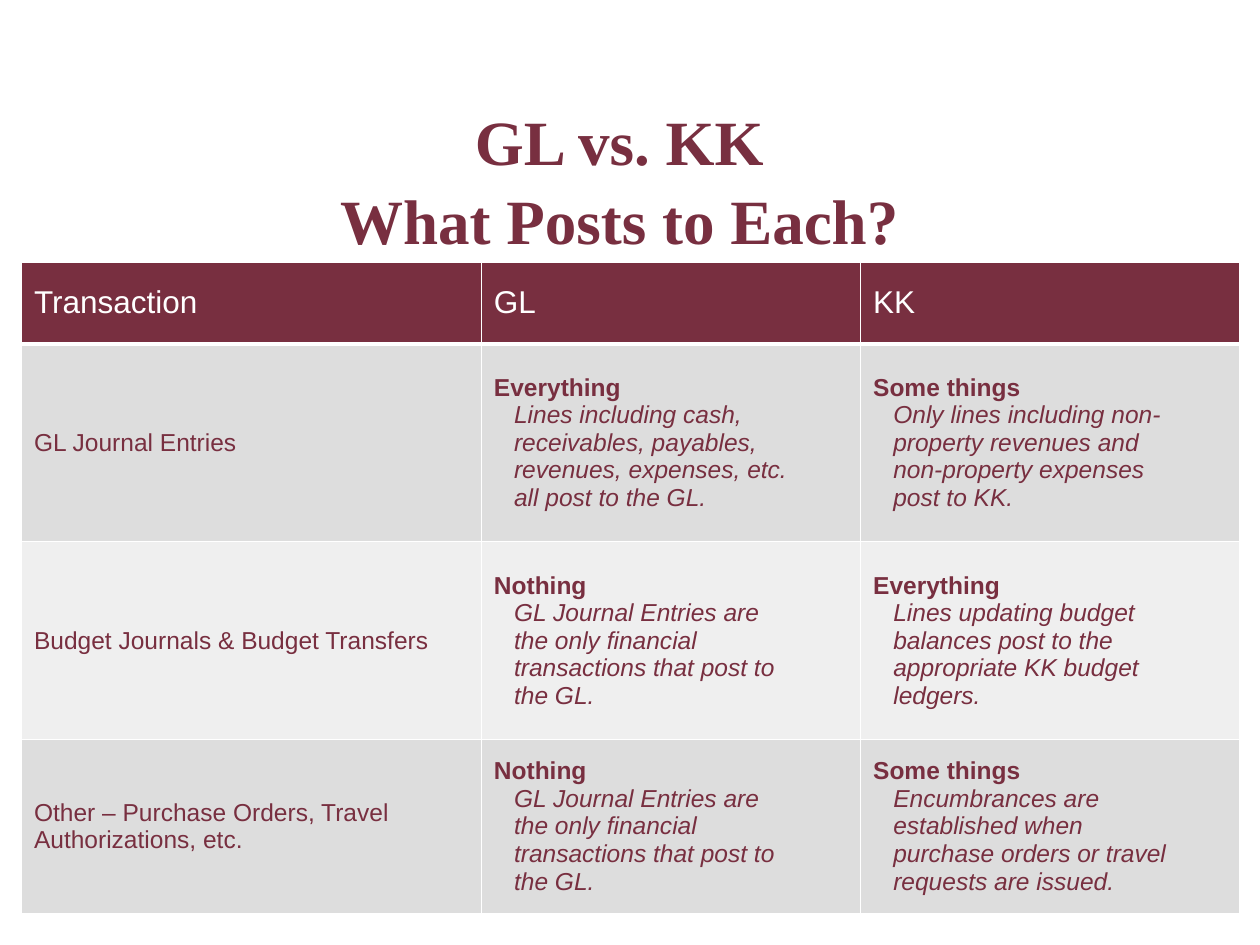
from dataclasses import dataclass

from lxml.etree import SubElement
from pptx import Presentation
from pptx.dml.color import RGBColor as RGB
from pptx.enum.text import MSO_ANCHOR as Anchor, PP_ALIGN as Align
from pptx.oxml.ns import qn
from pptx.util import Inches, Pt


@dataclass(frozen=True)
class Theme:
    garnet: str = "782F40"
    white: str = "FFFFFF"
    bands: tuple = ("DDDDDD", "EFEFEF")
    title_font: str = "Times New Roman"
    body_font: str = "Arial"
    title_size: int = 36
    header_size: int = 18
    body_size: int = 14
    rule: int = 1
    header_rule: int = 3


THEME = Theme()
COLUMN_WIDTHS = (3.65, 3.01, 3.01)
ROW_HEIGHTS = (0.65, 1.57, 1.57, 1.38)
DETAIL_INDENT = 0.16

HEADINGS = ("Transaction", "GL", "KK")
NOTHING_IN_GL = ("Nothing\nGL Journal Entries are\nthe only financial\n"
                 "transactions that post to\nthe GL.")
TRANSACTIONS = (
    ("GL Journal Entries",
     "Everything\nLines including cash,\nreceivables, payables,\n"
     "revenues, expenses, etc.\nall post to the GL.",
     "Some things\nOnly lines including non-\nproperty revenues and\n"
     "non-property expenses\npost to KK."),
    ("Budget Journals & Budget Transfers",
     NOTHING_IN_GL,
     "Everything\nLines updating budget\nbalances post to the\n"
     "appropriate KK budget\nledgers."),
    ("Other – Purchase Orders, Travel Authorizations, etc.",
     NOTHING_IN_GL,
     "Some things\nEncumbrances are\nestablished when\n"
     "purchase orders or travel\nrequests are issued."),
)


def style_runs(paragraph, font, size, color, bold=False, italic=False):
    for run in paragraph.runs:
        run.font.name = font
        run.font.size = Pt(size)
        run.font.color.rgb = RGB.from_string(color)
        run.font.bold = bold
        run.font.italic = italic


def add_title(slide, text):
    title = slide.shapes.add_textbox(Inches(1.27), Inches(0.92),
                                     Inches(7.29), Inches(1.17))
    frame = title.text_frame
    frame.word_wrap = True
    frame.vertical_anchor = Anchor.BOTTOM
    frame.margin_left = frame.margin_right = Inches(0.3)
    frame.text = text
    heading = frame.paragraphs[0]
    heading.alignment = Align.CENTER
    heading.line_spacing = 1.05
    style_runs(heading, THEME.title_font, THEME.title_size, THEME.garnet, bold=True)


def set_borders(cell, bottom):
    properties = cell._tc.get_or_add_tcPr()
    widths = {"L": THEME.rule, "R": THEME.rule, "T": THEME.rule, "B": bottom}
    for side, width in widths.items():
        line = SubElement(properties, qn(f"a:ln{side}"), w=str(Pt(width)))
        fill = SubElement(line, qn("a:solidFill"))
        SubElement(fill, qn("a:srgbClr"), val=THEME.white)


def fill_cell(cell, text, background, color, size, bottom=THEME.rule):
    set_borders(cell, bottom)
    cell.fill.solid()
    cell.fill.fore_color.rgb = RGB.from_string(background)
    cell.vertical_anchor = Anchor.MIDDLE
    cell.text_frame.text = text
    verdict, *details = cell.text_frame.paragraphs
    # A verdict is bold only when details follow it
    style_runs(verdict, THEME.body_font, size, color, bold=bool(details))
    for detail in details:
        detail._p.get_or_add_pPr().set("marL", str(Inches(DETAIL_INDENT)))
        style_runs(detail, THEME.body_font, size, color, italic=True)


def add_posting_table(slide):
    postings = slide.shapes.add_table(
        len(ROW_HEIGHTS), len(COLUMN_WIDTHS), Inches(0.17), Inches(2.08),
        Inches(sum(COLUMN_WIDTHS)), Inches(sum(ROW_HEIGHTS))).table
    for column, width in zip(postings.columns, COLUMN_WIDTHS):
        column.width = Inches(width)
    for row, height in zip(postings.rows, ROW_HEIGHTS):
        row.height = Inches(height)

    # Header row
    for column, heading in enumerate(HEADINGS):
        fill_cell(postings.cell(0, column), heading, THEME.garnet, THEME.white,
                  THEME.header_size, THEME.header_rule)

    # Transaction rows in alternating bands
    for index, transaction in enumerate(TRANSACTIONS):
        band = THEME.bands[index % len(THEME.bands)]
        for column, text in enumerate(transaction):
            fill_cell(postings.cell(index + 1, column), text, band,
                      THEME.garnet, THEME.body_size)


def main():
    deck = Presentation()
    deck.slide_width, deck.slide_height = Inches(10), Inches(7.5)
    slide = deck.slides.add_slide(deck.slide_layouts[6])
    add_title(slide, "GL vs. KK\vWhat Posts to Each?")
    add_posting_table(slide)
    deck.save("out.pptx")


if __name__ == "__main__":
    main()
